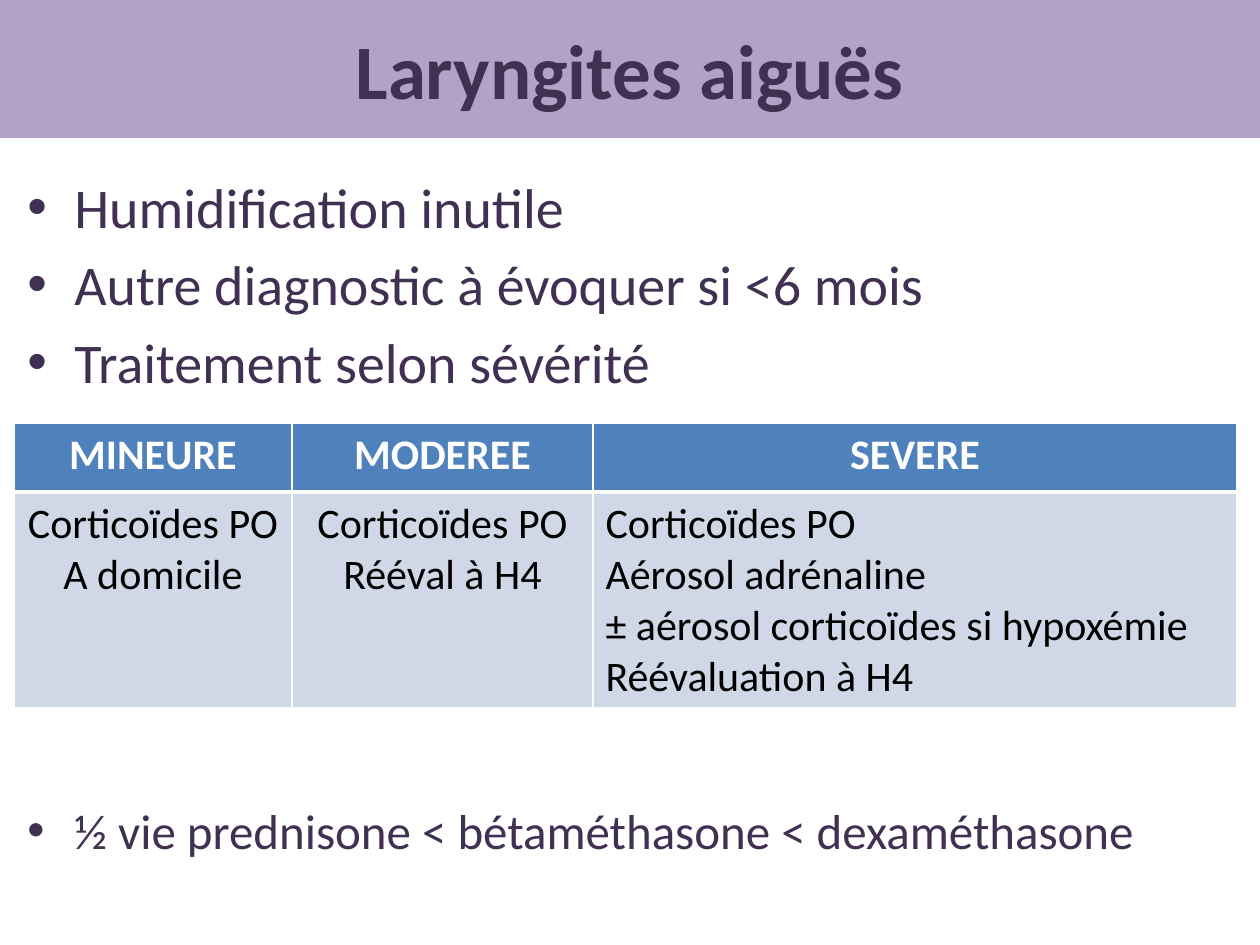
from dataclasses import dataclass

from pptx import Presentation
from pptx.dml.color import RGBColor
from pptx.enum.shapes import MSO_SHAPE
from pptx.enum.text import MSO_ANCHOR, PP_ALIGN
from pptx.oxml.ns import qn
from pptx.slide import Slide
from pptx.table import _Cell
from pptx.text.text import TextFrame
from pptx.util import Emu, Pt
from lxml.etree import SubElement


@dataclass(frozen=True)
class Theme:
    font: str = "Calibri"
    ink: str = "403152"
    banner: str = "B3A2C7"
    header: str = "4F81BD"
    cell: str = "D0D8E8"
    white: str = "FFFFFF"
    black: str = "000000"
    title_size: int = 44
    bullet_size: int = 32
    note_size: int = 28
    table_size: int = 24


@dataclass(frozen=True)
class BulletList:
    top: int
    height: int
    size: int
    lines: tuple[str, ...]


@dataclass(frozen=True)
class Severity:
    name: str
    width: int
    align: PP_ALIGN
    treatment: tuple[str, ...]


THEME = Theme()
SLIDE_W, SLIDE_H = 1260, 945
BANNER_H = 138
LIST_LEFT, LIST_W, HANGING = 15, 1212, 47
TABLE_LEFT, TABLE_TOP = 14, 423
ROW_HEIGHTS = (69, 216)

BULLET_LISTS = (
    BulletList(166, 245, THEME.bullet_size, (
        "Humidification inutile",
        "Autre diagnostic à évoquer si <6 mois",
        "Traitement selon sévérité",
    )),
    BulletList(794, 80, THEME.note_size, (
        "½ vie prednisone < bétaméthasone < dexaméthasone",
    )),
)

SEVERITIES = (
    Severity("MINEURE", 278, PP_ALIGN.CENTER, ("Corticoïdes PO", "A domicile")),
    Severity("MODEREE", 301, PP_ALIGN.CENTER, ("Corticoïdes PO", "Rééval à H4")),
    Severity("SEVERE", 644, PP_ALIGN.LEFT, (
        "Corticoïdes PO",
        "Aérosol adrénaline",
        "± aérosol corticoïdes si hypoxémie",
        "Réévaluation à H4",
    )),
)


def px(n: int) -> Emu:
    return Emu(round(n * 914400 / 126))


def rgb(color: str) -> RGBColor:
    return RGBColor.from_string(color)


def format_text(tf: TextFrame, size: int, color: str, align: PP_ALIGN,
                bold: bool = False) -> None:
    for p in tf.paragraphs:
        p.alignment = align
        for r in p.runs:
            r.font.name = THEME.font
            r.font.size = Pt(size)
            r.font.bold = bold
            r.font.color.rgb = rgb(color)


def add_banner(s: Slide, title: str) -> None:
    sp = s.shapes.add_shape(MSO_SHAPE.RECTANGLE, 0, 0, px(SLIDE_W), px(BANNER_H))
    sp.shadow.inherit = False
    sp.fill.solid()
    sp.fill.fore_color.rgb = rgb(THEME.banner)
    sp.line.fill.background()
    tf = sp.text_frame
    tf.vertical_anchor = MSO_ANCHOR.MIDDLE
    tf.text = title
    format_text(tf, THEME.title_size, THEME.ink, PP_ALIGN.CENTER, bold=True)


def add_bullets(s: Slide, item: BulletList) -> None:
    sp = s.shapes.add_textbox(px(LIST_LEFT), px(item.top), px(LIST_W), px(item.height))
    tf = sp.text_frame
    tf.word_wrap = True
    tf.text = "\n".join(item.lines)
    format_text(tf, item.size, THEME.ink, PP_ALIGN.LEFT)
    for i, p in enumerate(tf.paragraphs):
        if i:
            p.space_before = Pt(6)
        pPr = p._p.get_or_add_pPr()
        pPr.set("marL", str(px(HANGING)))
        pPr.set("indent", str(-px(HANGING)))
        SubElement(pPr, qn("a:buFont"), typeface="Arial")
        SubElement(pPr, qn("a:buChar"), char="•")


def set_borders(cell: _Cell, top: int, bottom: int) -> None:
    """Draw white borders; top and bottom widths are in points."""
    tcPr = cell._tc.get_or_add_tcPr()
    for side, width in (("L", 1), ("R", 1), ("T", top), ("B", bottom)):
        ln = SubElement(tcPr, qn(f"a:ln{side}"), w=str(Pt(width)))
        fill = SubElement(ln, qn("a:solidFill"))
        SubElement(fill, qn("a:srgbClr"), val=THEME.white)


def fill_cell(cell: _Cell, text: str, fill: str, color: str, align: PP_ALIGN,
              bold: bool = False) -> None:
    cell.fill.solid()
    cell.fill.fore_color.rgb = rgb(fill)
    cell.text_frame.text = text
    format_text(cell.text_frame, THEME.table_size, color, align, bold)


def add_severity_table(s: Slide) -> None:
    width = sum(item.width for item in SEVERITIES)
    table = s.shapes.add_table(
        len(ROW_HEIGHTS), len(SEVERITIES), px(TABLE_LEFT), px(TABLE_TOP),
        px(width), px(sum(ROW_HEIGHTS))).table
    for row, height in zip(table.rows, ROW_HEIGHTS):
        row.height = px(height)
    for i, item in enumerate(SEVERITIES):
        table.columns[i].width = px(item.width)
        head, body = table.cell(0, i), table.cell(1, i)
        set_borders(head, top=1, bottom=3)
        set_borders(body, top=3, bottom=1)
        fill_cell(head, item.name, THEME.header, THEME.white, PP_ALIGN.CENTER, bold=True)
        fill_cell(body, "\n".join(item.treatment), THEME.cell, THEME.black, item.align)


def main() -> None:
    prs = Presentation()
    prs.slide_width, prs.slide_height = px(SLIDE_W), px(SLIDE_H)
    s = prs.slides.add_slide(prs.slide_layouts[6])
    add_banner(s, "Laryngites aiguës")
    for item in BULLET_LISTS:
        add_bullets(s, item)
    add_severity_table(s)
    prs.save("out.pptx")


if __name__ == "__main__":
    main()
